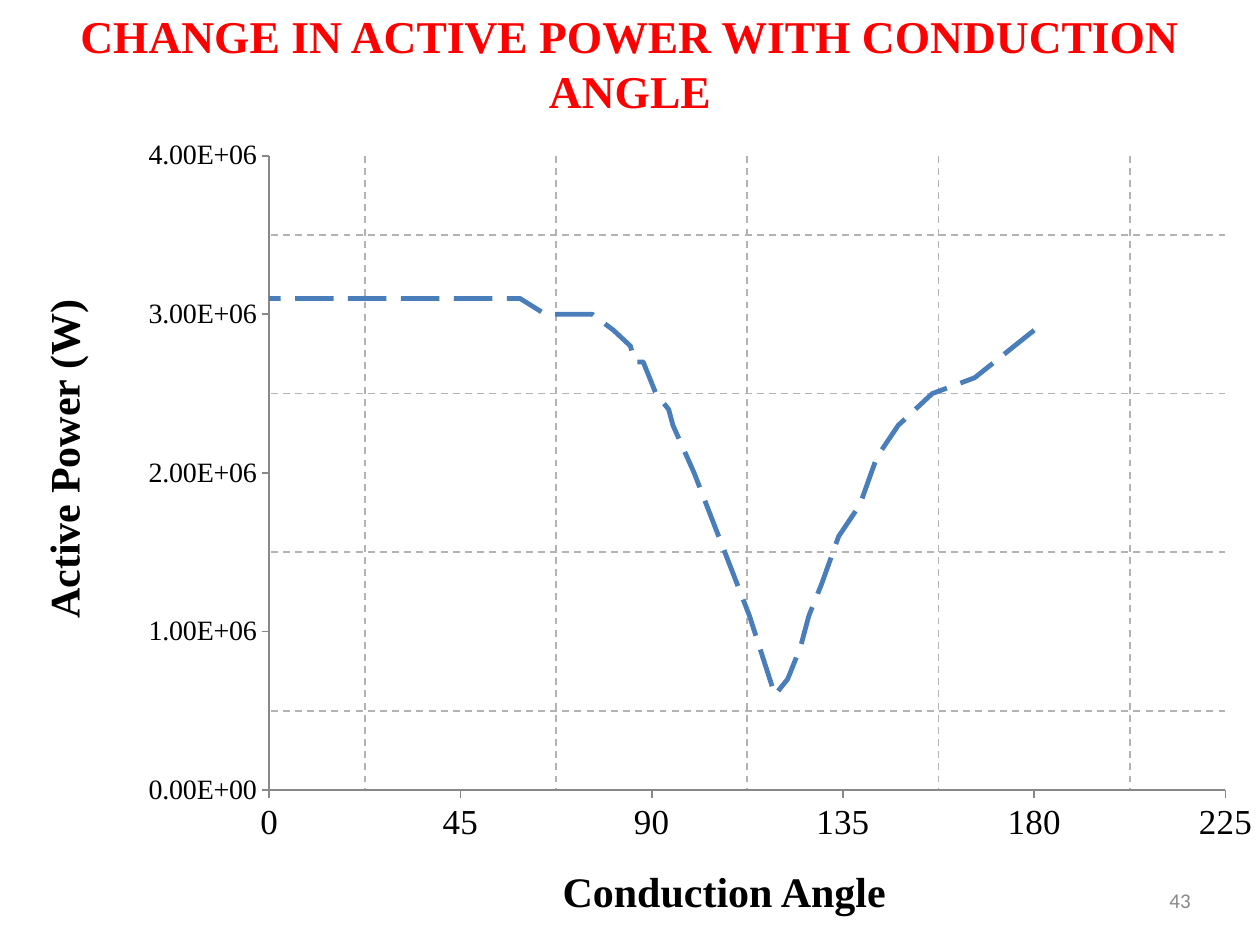
"""Build the slide that plots active power against conduction angle."""
from dataclasses import dataclass

from pptx import Presentation
from pptx.chart.data import XyChartData
from pptx.dml.color import RGBColor
from pptx.enum.chart import XL_CHART_TYPE, XL_TICK_MARK
from pptx.enum.dml import MSO_LINE
from pptx.enum.shapes import MSO_SHAPE
from pptx.enum.text import MSO_ANCHOR, PP_ALIGN
from pptx.oxml import parse_xml
from pptx.oxml.ns import nsdecls, qn
from pptx.util import Inches, Pt

SCATTER = XL_CHART_TYPE.XY_SCATTER_LINES_NO_MARKERS
TICK_OUT, TICK_NONE = XL_TICK_MARK.OUTSIDE, XL_TICK_MARK.NONE
LONG_DASH = MSO_LINE.LONG_DASH
RECTANGLE = MSO_SHAPE.RECTANGLE
TOP, MIDDLE = MSO_ANCHOR.TOP, MSO_ANCHOR.MIDDLE
CENTER, RIGHT = PP_ALIGN.CENTER, PP_ALIGN.RIGHT


@dataclass(frozen=True)
class Theme:
    """Colours, fonts and sizes of the slide."""
    heading: str = "FF0000"
    ink: str = "000000"
    muted: str = "888888"
    paper: str = "FFFFFF"
    curve: str = "4A7EBB"
    grid: str = "B3B3B3"
    serif: str = "Times New Roman"
    sans: str = "Calibri"
    heading_size: int = 26
    label_size: int = 24
    angle_size: int = 20
    power_size: int = 16
    number_size: int = 12
    chart_size: int = 10
    curve_width: float = 2.75


THEME = Theme()

POWER_BY_ANGLE = [
    (180, 2.9), (166, 2.6), (156, 2.5), (148, 2.3), (143, 2.1),
    (139, 1.8), (134, 1.6), (130, 1.3), (127, 1.1), (125, 0.9),
    (122, 0.7), (119, 0.6), (113, 1.1), (100, 2.0), (95, 2.3),
    (94, 2.4), (91, 2.5), (88, 2.7), (86, 2.7), (85, 2.8),
    (81, 2.9), (76, 3.0), (70, 3.0), (65, 3.0), (59, 3.1),
    (53, 3.1), (48, 3.1), (40, 3.1), (32, 3.1), (22, 3.1), (0, 3.1),
]


def set_format(target, values):
    """Set each named attribute on the target."""
    for name, value in values.items():
        setattr(target, name, value)


def set_font(font, size, color, face=THEME.serif, bold=False):
    """Give a font its face, size, weight and colour."""
    set_format(font, {"name": face, "size": Pt(size), "bold": bold})
    font.color.rgb = RGBColor.from_string(color)


def add_label(shapes, text, box, size, color, align,
              face=THEME.serif, bold=True, anchor=TOP, wrap=True, rotation=0):
    """Add one line of text in a box."""
    label = shapes.add_textbox(*map(Inches, box))
    label.rotation = rotation
    frame = label.text_frame
    margins = dict.fromkeys(
        ("margin_left", "margin_right", "margin_top", "margin_bottom"),
        Inches(0.05))
    set_format(frame, {"word_wrap": wrap, "vertical_anchor": anchor, **margins})
    paragraph = frame.paragraphs[0]
    paragraph.alignment = align
    run = paragraph.add_run()
    run.text = text
    set_font(run.font, size, color, face, bold)


def style_axis(axis, top, step, number_format, size):
    """Scale an axis from zero and dash its gridlines at half steps."""
    set_format(axis, {
        "minimum_scale": 0, "maximum_scale": top,
        "major_unit": step, "minor_unit": step / 2,
        "has_major_gridlines": False, "has_minor_gridlines": True,
        "major_tick_mark": TICK_OUT, "minor_tick_mark": TICK_NONE,
        "has_title": False,
    })
    set_format(axis.tick_labels, {
        "number_format": number_format, "number_format_is_linked": False})
    set_font(axis.tick_labels.font, size, THEME.ink)
    axis.format.line.color.rgb = RGBColor.from_string(THEME.muted)
    axis.format.line.width = Pt(1)
    grid = axis._element.find(qn("c:minorGridlines"))
    grid.append(parse_xml(
        f'<c:spPr {nsdecls("c", "a")}><a:ln w="{Pt(1)}"><a:solidFill>'
        f'<a:srgbClr val="{THEME.grid}"/></a:solidFill>'
        '<a:prstDash val="dash"/></a:ln></c:spPr>'))


def place_plot(chart, x, y, w, h):
    """Fix the inner plot area as fractions of the chart."""
    plot_area = chart._chartSpace.chart.plotArea
    for layout in plot_area.findall(qn("c:layout")):
        plot_area.remove(layout)
    sides = "".join(f'<c:{side} val="{value}"/>' for side, value in
                    {"x": x, "y": y, "w": w, "h": h}.items())
    plot_area.insert(0, parse_xml(
        f'<c:layout {nsdecls("c")}><c:manualLayout>'
        '<c:layoutTarget val="inner"/><c:xMode val="edge"/>'
        f'<c:yMode val="edge"/>{sides}</c:manualLayout></c:layout>'))


def add_power_chart(shapes, box):
    """Add the curve of active power over conduction angle."""
    data = XyChartData()
    readings = data.add_series("Series 1")
    for angle, megawatts in POWER_BY_ANGLE:
        readings.add_data_point(angle, round(megawatts * 1_000_000))
    chart = shapes.add_chart(SCATTER, *map(Inches, box), data).chart
    set_format(chart, {"has_legend": False, "has_title": False})
    set_font(chart.font, THEME.chart_size, THEME.ink, THEME.sans)
    chart.plots[0].vary_by_categories = False
    curve = chart.plots[0].series[0]
    curve.smooth = False
    curve.format.line.color.rgb = RGBColor.from_string(THEME.curve)
    set_format(curve.format.line, {
        "width": Pt(THEME.curve_width), "dash_style": LONG_DASH})
    style_axis(chart.category_axis, 225, 45, "General", THEME.angle_size)
    style_axis(chart.value_axis, 4_000_000, 1_000_000, "0.00E+00",
               THEME.power_size)
    place_plot(chart, 0.125, 0.052, 0.85, 0.855)


def add_angle_label(shapes):
    """Add the horizontal axis label on its plain backing."""
    group = shapes.add_group_shape().shapes
    backing = group.add_shape(RECTANGLE, *map(Inches, (4.08, 6.82, 3, 0.68)))
    backing.shadow.inherit = False
    backing.fill.solid()
    backing.fill.fore_color.rgb = RGBColor.from_string(THEME.paper)
    backing.line.fill.background()
    add_label(group, "Conduction Angle", (4.08, 6.82, 3, 0.46),
              THEME.label_size, THEME.ink, RIGHT)


def main():
    """Build and save the slide."""
    deck = Presentation()
    set_format(deck, {"slide_width": Inches(10), "slide_height": Inches(7.5)})
    shapes = deck.slides.add_slide(deck.slide_layouts[6]).shapes
    add_label(shapes, "CHANGE IN ACTIVE POWER WITH CONDUCTION ANGLE",
              (0, 0, 10, 1), THEME.heading_size, THEME.heading, CENTER,
              anchor=MIDDLE)
    add_label(shapes, "43", (9.21, 7, 0.29, 0.29), THEME.number_size,
              THEME.muted, RIGHT, face=THEME.sans, bold=False,
              anchor=MIDDLE, wrap=False)
    add_power_chart(shapes, (1.02, 0.93, 8.93, 5.89))
    add_label(shapes, "Active Power (W)", (-1.08, 3.66, 3.12, 0.46),
              THEME.label_size, THEME.ink, RIGHT, rotation=270)
    add_angle_label(shapes)
    deck.save("out.pptx")


if __name__ == "__main__":
    main()
